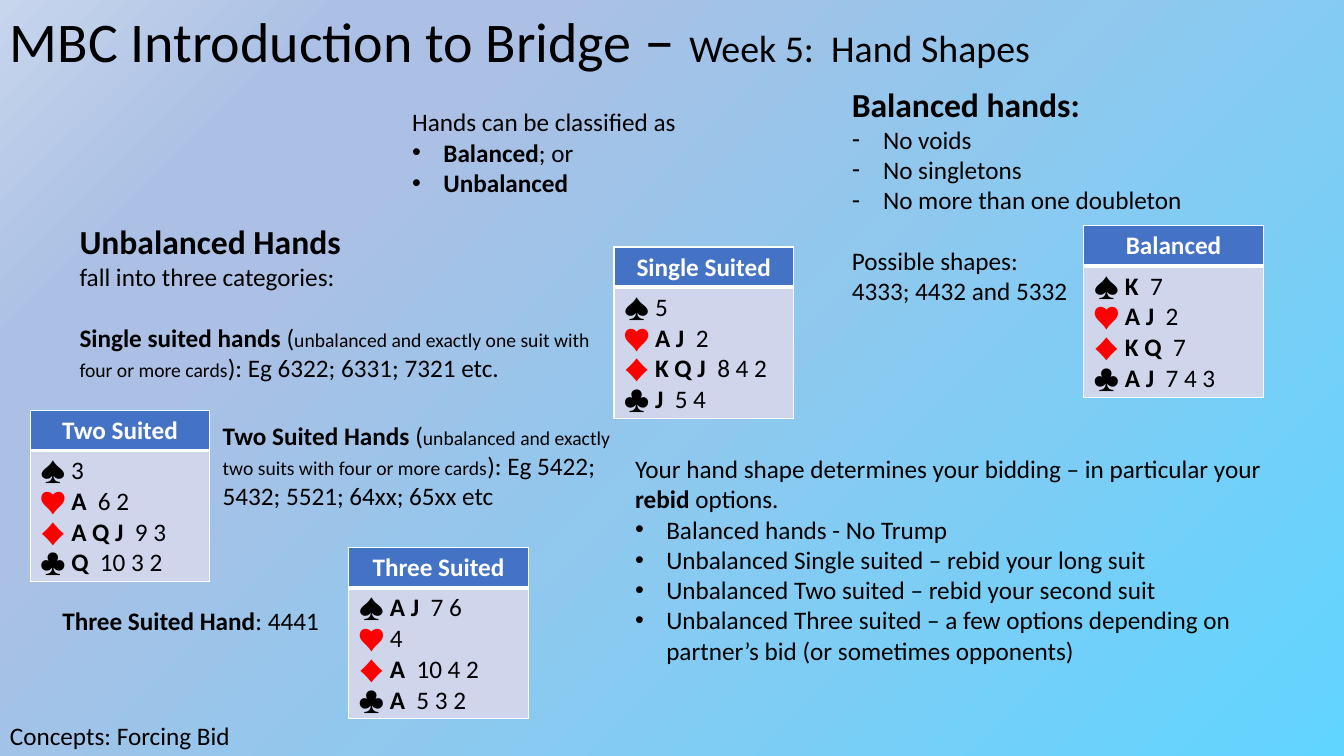
from pptx import Presentation
from pptx import util as u
from pptx.dml.color import RGBColor
from pptx.enum import text
from pptx.oxml import parse_xml
from pptx.oxml.ns import nsdecls

BLACK = RGBColor(0, 0, 0)
WHITE = RGBColor(255, 255, 255)
RED = RGBColor(255, 0, 0)
HEADER_BLUE = RGBColor(0x44, 0x72, 0xC4)
BODY_BLUE = RGBColor(0xCF, 0xD5, 0xEA)
BACKGROUND = [(0, "60D5FF"), (74, "ABC0E4"), (83, "ABC0E4"), (100, "C7D5ED")]


def add_runs(p, runs):
    for wording, size, bold, color in runs:
        r = p.add_run()
        r.text = wording
        r.font.name = "Calibri"
        r.font.size = u.Pt(size)
        r.font.bold = bold
        r.font.color.rgb = color


def set_borders(cell, widths):
    for side, width in zip("LRTB", widths):
        cell._tc.get_or_add_tcPr().append(parse_xml(
            f'<a:ln{side} {nsdecls("a")} w="{u.Pt(width)}"><a:solidFill>'
            f'<a:srgbClr val="{WHITE}"/></a:solidFill></a:ln{side}>'))


prs = Presentation()
prs.slide_width, prs.slide_height = u.Inches(13.33), u.Inches(7.5)
s = prs.slides.add_slide(prs.slide_layouts[6])

s.background.fill.gradient()
grad = s.background._cSld.bg.bgPr[0]
stops = "".join(f'<a:gs pos="{pos * 1000}"><a:srgbClr val="{color}"/></a:gs>'
                for pos, color in BACKGROUND)
grad.getparent().replace(grad, parse_xml(
    f'<a:gradFill {nsdecls("a")} rotWithShape="1"><a:gsLst>{stops}</a:gsLst>'
    '<a:path path="circle"><a:fillToRect l="100000" t="100000"/></a:path></a:gradFill>'))

# Each paragraph: bullet, space before, then (wording, size, bold) runs.
boxes = [
    (0, 0, 13.33, 0.84, [
        ("", 0, [("MBC Introduction to Bridge ", 40, False), ("– ", 44, False),
                 ("Week 5:  Hand Shapes", 27, False)])]),
    (3.99, 1.01, 3.93, 1.01, [
        ("", 0, [("Hands can be classified as", 18, False)]),
        ("•", 0, [("Balanced", 18, True), ("; or", 18, False)]),
        ("•", 0, [("Unbalanced", 18, True)])]),
    (0, 7.1, 3.03, 0.4, [("", 0, [("Concepts: Forcing Bid", 18, False)])]),
    (8.35, 0.78, 3.93, 2.32, [
        ("", 0, [("Balanced hands:", 24, True)]),
        ("-", 0, [("No voids", 18, False)]),
        ("-", 0, [("No singletons", 18, False)]),
        ("-", 0, [("No more than one doubleton", 18, False)]),
        ("", 22, [("Possible shapes:", 18, False)]),
        ("", 0, [("4333; 4432 and 5332", 18, False)])]),
    (0.69, 2.14, 7.32, 1.72, [
        ("", 0, [("Unbalanced Hands", 24, True)]),
        ("", 0, [("fall into three categories:", 18, False)]),
        ("", 22, [("Single suited hands ", 18, True), ("(", 18, False),
                  ("unbalanced and exactly one suit with", 14, False)]),
        ("", 0, [("four or more cards", 14, False),
                 ("): Eg 6322; 6331; 7321 etc.", 18, False)])]),
    (6.2, 4.45, 6.58, 2.22, [
        ("", 0, [("Your hand shape determines your bidding – in particular your ", 18, False),
                 ("rebid", 18, True), (" options.", 18, False)]),
        ("•", 0, [("Balanced hands - No Trump", 18, False)]),
        ("•", 0, [("Unbalanced Single suited – rebid your long suit", 18, False)]),
        ("•", 0, [("Unbalanced Two suited – rebid your second suit", 18, False)]),
        ("•", 0, [("Unbalanced Three suited – a few options depending on "
                   "partner’s bid (or sometimes opponents)", 18, False)])]),
    (2.11, 4.12, 4.17, 1.01, [
        ("", 0, [("Two Suited Hands ", 18, True), ("(", 18, False),
                 ("unbalanced and exactly two suits with four or more cards", 14, False),
                 ("): Eg 5422; 5432; 5521; 64xx; 65xx etc", 18, False)])]),
    (0.52, 5.96, 2.77, 0.71, [
        ("", 0, [("Three Suited Hand", 18, True), (": 4441", 18, False)])]),
]
for x, y, w, h, paragraphs in boxes:
    sp = s.shapes.add_textbox(*map(u.Inches, (x, y, w, h)))
    tf = sp.text_frame
    tf.word_wrap = True
    for i, (bullet, space, runs) in enumerate(paragraphs):
        p = tf.paragraphs[0] if i == 0 else tf.add_paragraph()
        p.space_before = u.Pt(space)
        if bullet:
            pPr = p._p.get_or_add_pPr()
            pPr.set("marL", str(u.Inches(0.31)))
            pPr.set("indent", str(-u.Inches(0.31)))
            pPr.append(parse_xml(f'<a:buFont {nsdecls("a")} typeface="Arial"/>'))
            pPr.append(parse_xml(f'<a:buChar {nsdecls("a")} char="{bullet}"/>'))
        add_runs(p, [(*run, BLACK) for run in runs])

title = s.shapes[0].text_frame
title.vertical_anchor = text.MSO_ANCHOR.MIDDLE
title.paragraphs[0].line_spacing = 0.9

hands = [
    ("Balanced", 10.75, 2.24, [("K ", " 7"), ("A J  ", "2"), ("K Q  ", "7"), ("A J", "  7 4 3")]),
    ("Three Suited", 3.46, 5.43, [("A J  ", "7 6"), ("", "4"), ("A  ", "10 4 2"), ("A", "  5 3 2")]),
    ("Two Suited", 0.3, 4.07, [("", "3"), ("A", "  6 2"), ("A Q J  ", "9 3"), ("Q", "  10 3 2")]),
    ("Single Suited", 6.09, 2.45, [("", "5"), ("A J  ", "2"), ("K Q J  ", "8 4 2"), ("J  ", "5 4")]),
]
for name, x, y, holdings in hands:
    table = s.shapes.add_table(2, 1, *map(u.Inches, (x, y, 1.78, 1.7))).table
    table.first_row = table.horz_banding = False
    table.rows[0].height, table.rows[1].height = u.Inches(0.4), u.Inches(1.3)
    header, body = table.cell(0, 0), table.cell(1, 0)
    for cell, widths, color in ((header, (1, 1, 1, 3), HEADER_BLUE),
                                (body, (1, 1, 3, 1), BODY_BLUE)):
        set_borders(cell, widths)
        cell.fill.solid()
        cell.fill.fore_color.rgb = color
    p = header.text_frame.paragraphs[0]
    p.alignment = text.PP_ALIGN.CENTER
    add_runs(p, [(name, 18, True, WHITE)])
    tf = body.text_frame
    for i, (suit, (honours, others)) in enumerate(zip("♠♥♦♣", holdings)):
        p = tf.paragraphs[0] if i == 0 else tf.add_paragraph()
        runs = [(suit + " ", 18, False, RED if suit in "♥♦" else BLACK),
                (honours, 18, True, BLACK), (others, 18, False, BLACK)]
        add_runs(p, [run for run in runs if run[0]])

prs.save("out.pptx")
